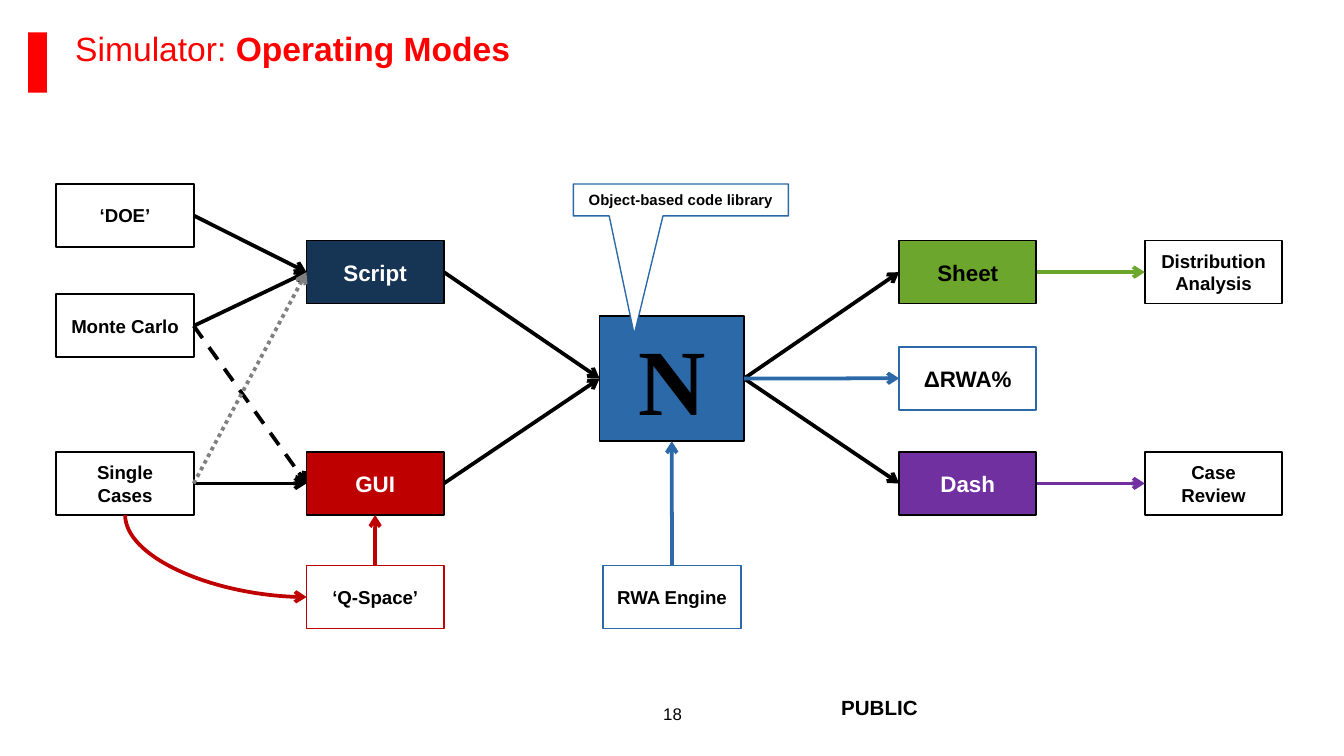
from lxml import etree
from pptx import Presentation
from pptx import util as u
from pptx.dml import color
from pptx.enum import dml, shapes, text
from pptx.oxml import ns

Pt = u.Pt
HUE = {"red": "FF0000", "black": "000000", "white": "FFFFFF", "blue": "2B69A8",
       "navy": "163554", "wine": "BF0000", "green": "6CA62C", "plum": "7030A0",
       "gray": "808080"}
WIDE, HIGH = 73.6, 33.8
COLS = [30.2, 164.2, 323.2, 481.7, 613.3]
ROWS = [98.6, 128.9, 157.7, 185.8, 242.1, 303]
SIDES = {"top": 0, "left": 1, "base": 2, "right": 3}
NODES = {
    "doe": ("‘DOE’", 0, 0, 10, "white", "black", "black"),
    "monte": ("Monte Carlo", 0, 2, 10, "white", "black", "black"),
    "single": ("Single Cases", 0, 4, 10, "white", "black", "black"),
    "script": ("Script", 1, 1, 12, "navy", "black", "white"),
    "gui": ("GUI", 1, 4, 12, "wine", "black", "white"),
    "space": ("‘Q-Space’", 1, 5, 10, "white", "wine", "black"),
    "engine": ("RWA Engine", 2, 5, 10, "white", "blue", "black"),
    "sheet": ("Sheet", 3, 1, 12, "green", "black", "black"),
    "delta": ("ΔRWA%", 3, 3, 12, "white", "blue", "black"),
    "dash": ("Dash", 3, 4, 12, "plum", "black", "white"),
    "spread": ("Distribution Analysis", 4, 1, 10, "white", "black", "black"),
    "review": ("Case Review", 4, 4, 10, "white", "black", "black"),
}
LINKS = [
    ("doe", "right", "script", "left", "black", None),
    ("monte", "right", "script", "left", "black", None),
    ("monte", "right", "gui", "left", "black", "DASH"),
    ("single", "right", "gui", "left", "black", None),
    ("single", "right", "script", "left", "gray", "ROUND_DOT"),
    ("script", "right", "core", "left", "black", None),
    ("gui", "right", "core", "left", "black", None),
    ("core", "right", "sheet", "left", "black", None),
    ("core", "right", "dash", "left", "black", None),
    ("core", "right", "delta", "left", "blue", None),
    ("engine", "top", "core", "base", "blue", None),
    ("space", "top", "gui", "base", "wine", None),
    ("sheet", "right", "spread", "left", "green", None),
    ("dash", "right", "review", "left", "plum", None),
]


def put(item, **vals):
    """Set each given attribute on an object."""
    for key, val in vals.items():
        setattr(item, key, val)


def tint(name):
    """Turn a colour name into an RGB colour."""
    return color.RGBColor.from_string(HUE[name])


def write(frame, runs, size, hue, align="CENTER", face="Arial", **vals):
    """Fill a text frame with one paragraph of (words, bold) runs."""
    put(frame, **vals)
    para = frame.paragraphs[0]
    para.alignment = getattr(text.PP_ALIGN, align)
    for words, bold in runs:
        run = para.add_run()
        run.text = words
        put(run.font, name=face, size=Pt(size), bold=bold)
        run.font.color.rgb = tint(hue)
    return para


def block(slide, box, fill, edge=None, width=1, kind="RECTANGLE"):
    """Draw a filled shape in the given box."""
    shape = slide.shapes.add_shape(getattr(shapes.MSO_SHAPE, kind), *map(Pt, box))
    shape.shadow.inherit = False
    shape.fill.solid()
    shape.fill.fore_color.rgb = tint(fill)
    if edge:
        shape.line.color.rgb = tint(edge)
        shape.line.width = Pt(width)
    else:
        shape.line.fill.background()
    return shape


def head(slide, box):
    """Draw the red bar and the title to its right."""
    left, top, width, high = box
    block(slide, (left, top, 10.1, 32.4), "red")
    title = slide.shapes.title
    put(title, left=Pt(left + 25.2), top=Pt(top), width=Pt(width - 25.2), height=Pt(high))
    para = write(title.text_frame, [("Simulator: ", False), ("Operating Modes", True)],
                 18, "red", "LEFT", margin_left=0, margin_right=0, margin_top=0,
                 margin_bottom=Pt(1.4), vertical_anchor=text.MSO_ANCHOR.TOP,
                 auto_size=text.MSO_AUTO_SIZE.NONE)
    para.line_spacing = 0.9


def foot(slide, box):
    """Write the page number and the class mark."""
    left, top, width, high = box
    page = slide.shapes.add_textbox(Pt(left - 2.2), Pt(top + 8.6), Pt(10.8), Pt(10.8))
    write(page.text_frame, [("18", False)], 9, "black", word_wrap=False,
          margin_left=0, margin_right=0, margin_top=0, margin_bottom=0,
          vertical_anchor=text.MSO_ANCHOR.MIDDLE)
    mark = slide.shapes.add_textbox(*map(Pt, box))
    write(mark.text_frame, [("PUBLIC", True)], 11, "black", word_wrap=True)


def finish(line, hue, dash=None):
    """Style a connector as an open arrow."""
    line.line.color.rgb = tint(hue)
    line.line.width = Pt(2)
    if dash:
        line.line.dash_style = getattr(dml.MSO_LINE, dash)
    stroke = line.line._get_or_add_ln()
    etree.SubElement(stroke, ns.qn("a:tailEnd"), type="arrow")
    etree.SubElement(line._element.spPr, ns.qn("a:effectLst"))


def link(slide, start, side, stop, end, hue, dash):
    """Join two shapes side to side with a straight arrow."""
    line = slide.shapes.add_connector(shapes.MSO_CONNECTOR.STRAIGHT, 0, 0, 0, 0)
    line.begin_connect(start, SIDES[side])
    line.end_connect(stop, SIDES[end])
    finish(line, hue, dash)


def bend(slide, box, hue):
    """Draw a quarter curve from the top left to the bottom right of a box."""
    left, top, width, high = box
    midx, midy = left + width / 2, top + high / 2
    ends = (midx + high / 2, midy - width / 2, midx - high / 2, midy + width / 2)
    line = slide.shapes.add_connector(shapes.MSO_CONNECTOR.CURVE, *map(Pt, ends))
    form = line._element.spPr
    form.find(ns.qn("a:xfrm")).set("rot", str(270 * 60000))
    form.find(ns.qn("a:prstGeom")).set("prst", "curvedConnector2")
    finish(line, hue)


def flow(slide, box):
    """Draw the nodes, the core with its callout, and all arrows."""
    left, top, width, high = box
    core = block(slide, (left + 291, top + 70.6, 77.4, 67.2), "blue", "black")
    write(core.text_frame, [("N", True)], 50, "black", face="Times New Roman",
          word_wrap=False, vertical_anchor=text.MSO_ANCHOR.BOTTOM)
    parts = {"core": core}
    for name, (words, col, row, size, fill, edge, ink) in NODES.items():
        place = (left + COLS[col] - COLS[0], top + ROWS[row] - ROWS[0], WIDE, HIGH)
        parts[name] = block(slide, place, fill, edge)
        write(parts[name].text_frame, [(words, True)], size, ink,
              word_wrap=col in (0, 4))
    for start, side, stop, end, hue, dash in LINKS:
        link(slide, parts[start], side, parts[stop], end, hue, dash)
    low = top + ROWS[4] - ROWS[0] + HIGH
    bend(slide, (left + WIDE / 2, low, COLS[1] - COLS[0] - WIDE / 2,
                 top + ROWS[5] - ROWS[0] + HIGH / 2 - low), "wine")
    note = block(slide, (left + 277, top, 115.2, 17.1), "white", "blue", 0.75,
                 "RECTANGULAR_CALLOUT")
    note.adjustments[0], note.adjustments[1] = -0.217, 4.221
    write(note.text_frame, [("Object-based code library", True)], 8, "black",
          word_wrap=True)


def main():
    """Build and save the deck."""
    deck = Presentation()
    put(deck, slide_width=Pt(720), slide_height=Pt(405))
    slide = deck.slides.add_slide(deck.slide_layouts[5])
    head(slide, (15.1, 17.3, 665.3, 40.3))
    flow(slide, (COLS[0], ROWS[0], 656.7, 238.2))
    foot(slide, (357.1, 368.6, 228.2, 28.1))
    deck.save("out.pptx")


if __name__ == "__main__":
    main()
